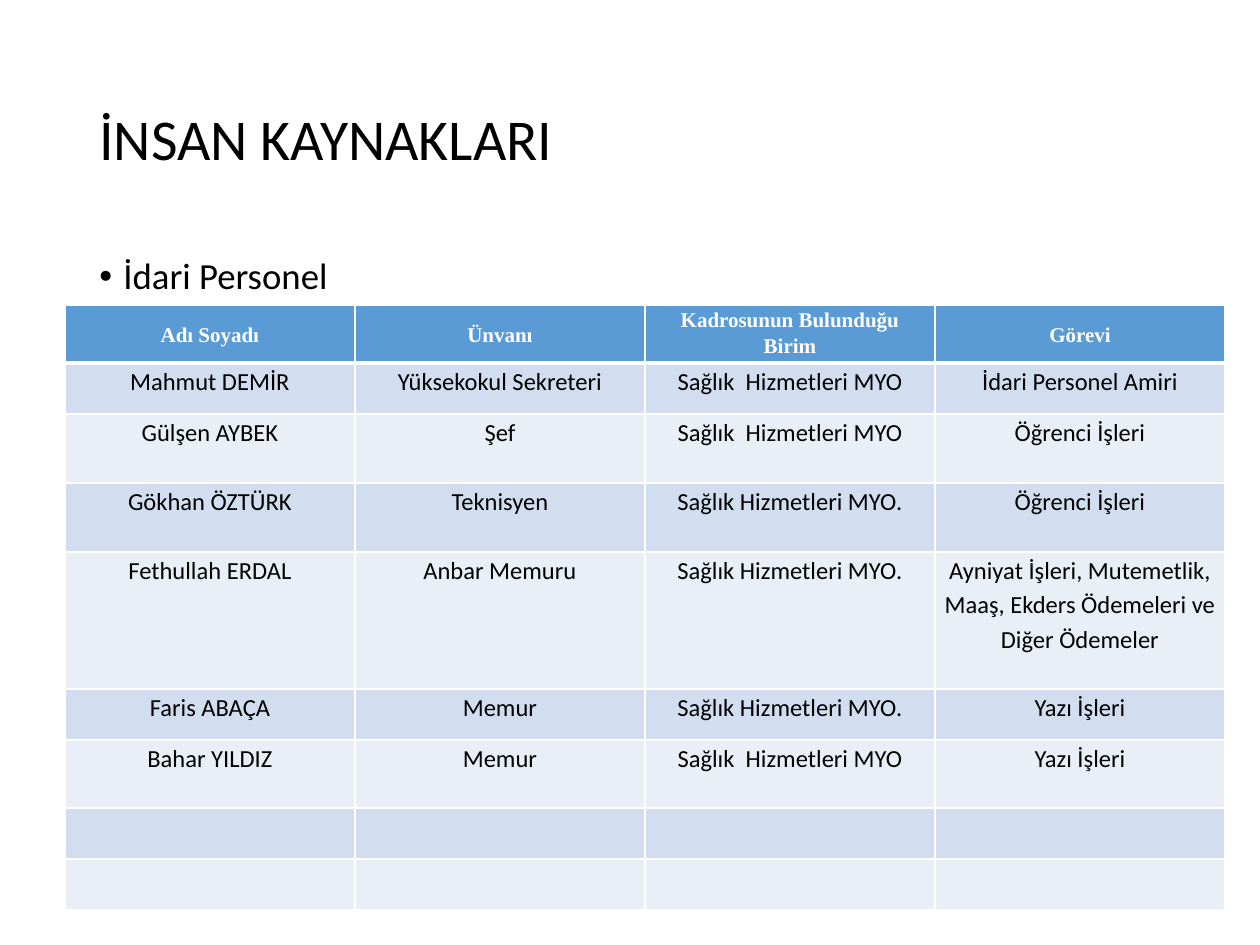
from lxml import etree
from pptx import Presentation
from pptx.dml.color import RGBColor
from pptx.enum.text import MSO_ANCHOR, PP_ALIGN
from pptx.oxml.ns import qn
from pptx.util import Emu, Pt

TOP, MIDDLE = MSO_ANCHOR.TOP, MSO_ANCHOR.MIDDLE
LEFT, CENTER = PP_ALIGN.LEFT, PP_ALIGN.CENTER
PX_PER_INCH = 126
COLORS = {
    "text": "000000",
    "white": "FFFFFF",
    "header": "5B9BD5",
    "odd": "D2DEEF",
    "even": "EAEFF7",
}
HEADINGS = ["Adı Soyadı", "Ünvanı", "Kadrosunun Bulunduğu Birim", "Görevi"]
STAFF = [
    ["Mahmut DEMİR", "Yüksekokul Sekreteri", "Sağlık  Hizmetleri MYO", "İdari Personel Amiri"],
    ["Gülşen AYBEK", "Şef", "Sağlık  Hizmetleri MYO", "Öğrenci İşleri"],
    ["Gökhan ÖZTÜRK", "Teknisyen", "Sağlık Hizmetleri MYO.", "Öğrenci İşleri"],
    ["Fethullah ERDAL", "Anbar Memuru", "Sağlık Hizmetleri MYO.",
     "Ayniyat İşleri, Mutemetlik, Maaş, Ekders Ödemeleri ve Diğer Ödemeler"],
    ["Faris ABAÇA", "Memur", "Sağlık Hizmetleri MYO.", "Yazı İşleri"],
    ["Bahar YILDIZ", "Memur", "Sağlık  Hizmetleri MYO", "Yazı İşleri"],
    [""] * 4,
    [""] * 4,
]
ROW_HEIGHTS = [52, 51, 69, 69, 137, 51, 68, 51, 51]


def px(length):
    return Emu(round(length * 914400 / PX_PER_INCH))


def rgb(name):
    return RGBColor.from_string(COLORS[name])


def write(frame, text, size=14, font="Calibri", color="text", bold=False,
          align=LEFT, spacing=0.9, before=0):
    """Put one formatted paragraph into a text frame and return it."""
    paragraph = frame.paragraphs[0]
    paragraph.alignment = align
    paragraph.line_spacing = spacing
    paragraph.space_before = Pt(before)
    # Without a run, the paragraph font sets the height of the empty line
    target = paragraph.add_run() if text else paragraph
    if text:
        target.text = text
    target.font.size = Pt(size)
    target.font.name = font
    target.font.bold = bold
    target.font.color.rgb = rgb(color)
    return paragraph


def add_text(slide, box, text, anchor=TOP, **style):
    frame = slide.shapes.add_textbox(*map(px, box)).text_frame
    frame.word_wrap = True
    frame.vertical_anchor = anchor
    return write(frame, text, **style)


def add_bullet(paragraph, indent):
    props = paragraph._p.get_or_add_pPr()
    props.set("marL", str(px(indent)))
    props.set("indent", str(-px(indent)))
    etree.SubElement(props, qn("a:buFont"), typeface="Arial")
    etree.SubElement(props, qn("a:buChar"), char="•")


def add_borders(cell, bottom):
    props = cell._tc.get_or_add_tcPr()
    sides = {"a:lnL": 1, "a:lnR": 1, "a:lnT": 1, "a:lnB": bottom}
    for position, (side, width) in enumerate(sides.items()):
        line = etree.Element(qn(side), w=str(Pt(width)))
        fill = etree.SubElement(line, qn("a:solidFill"))
        etree.SubElement(fill, qn("a:srgbClr"), val=COLORS["white"])
        props.insert(position, line)


def add_heading(slide, box):
    left, top, width, height = box
    # Title
    add_text(slide, (left, top, width, 183), "İNSAN KAYNAKLARI", anchor=MIDDLE, size=33)
    # Subheading
    subheading = add_text(slide, (left, top + 202, width, height - 202),
                          "İdari Personel", size=21, before=7.5)
    add_bullet(subheading, 24)


def add_staff_table(slide, box):
    rows = [HEADINGS] + STAFF
    table = slide.shapes.add_table(len(rows), len(HEADINGS), *map(px, box)).table
    for column in table.columns:
        column.width = px(box[2] // len(HEADINGS))
    for r, (texts, height) in enumerate(zip(rows, ROW_HEIGHTS)):
        table.rows[r].height = px(height)
        is_header = r == 0
        fill = "header" if is_header else "odd" if r % 2 else "even"
        for c, text in enumerate(texts):
            cell = table.cell(r, c)
            cell.margin_left = cell.margin_right = px(9)
            cell.margin_top = cell.margin_bottom = 0
            # The two-line heading starts at the top of its cell
            cell.vertical_anchor = MIDDLE if is_header and c != 2 else TOP
            cell.fill.solid()
            cell.fill.fore_color.rgb = rgb(fill)
            add_borders(cell, bottom=3 if is_header else 1)
            style = {"size": 12, "font": "Times New Roman", "color": "white",
                     "bold": True} if is_header else {}
            write(cell.text_frame, text, align=CENTER, spacing=1.15, **style)


def main():
    deck = Presentation()
    deck.slide_width, deck.slide_height = px(1260), px(945)
    slide = deck.slides.add_slide(deck.slide_layouts[6])
    add_heading(slide, (87, 50, 1086, 252))
    add_staff_table(slide, (65, 305, 1160, sum(ROW_HEIGHTS)))
    deck.save("out.pptx")


if __name__ == "__main__":
    main()
